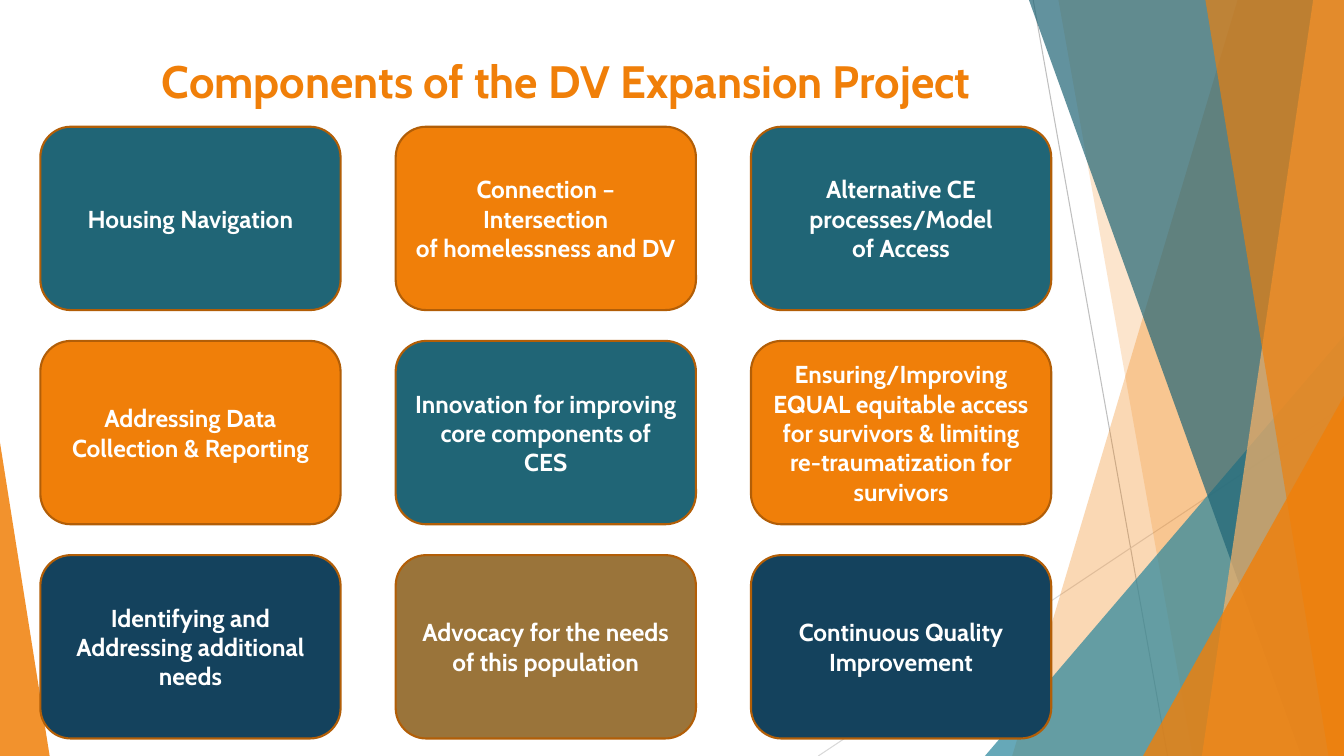
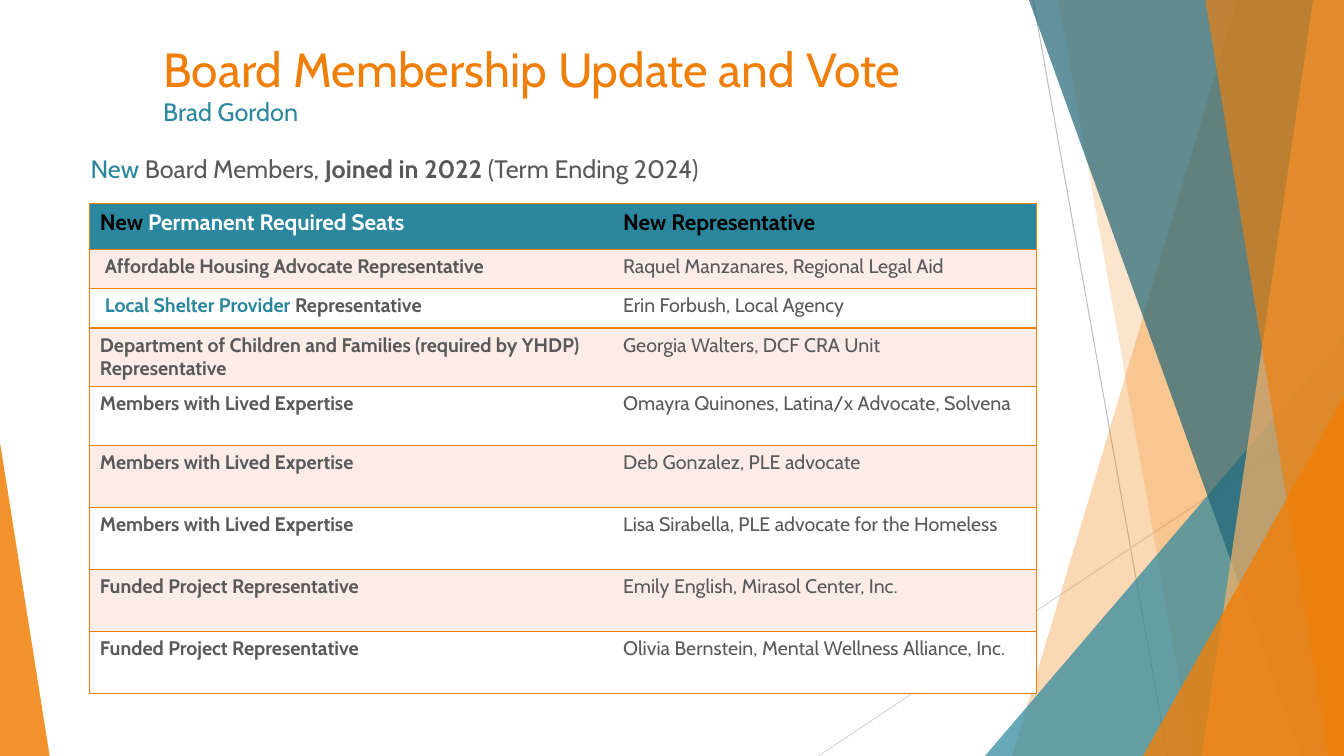
from lxml.etree import SubElement
from pptx import Presentation
from pptx.dml.color import RGBColor
from pptx.enum.shapes import MSO_CONNECTOR, MSO_SHAPE
from pptx.enum.text import MSO_ANCHOR, PP_ALIGN
from pptx.oxml import parse_xml
from pptx.oxml.ns import nsdecls, qn
from pptx.util import Pt

WIDTH, HEIGHT = 960, 540
FONT = "Cabin"
ORANGE, PALE_ORANGE, BROWN, RUST = "F07F09", "F9B268", "9A743A", "B25E07"
TEAL, DARK_TEAL, NAVY = "2B879D", "206576", "14425D"
WHITE, BLACK, GREY, BLUSH = "FFFFFF", "000000", "595959", "FCECE7"

COMPONENTS = [
    [("Housing Navigation", DARK_TEAL),
     ("Connection – Intersection\nof homelessness and DV", ORANGE),
     ("Alternative CE processes/Model\nof Access", DARK_TEAL)],
    [("Addressing Data Collection & Reporting", ORANGE),
     ("Innovation for improving core components of\nCES", DARK_TEAL),
     ("Ensuring/Improving EQUAL equitable access for survivors & limiting "
      "re-traumatization for survivors", ORANGE)],
    [("Identifying and Addressing additional needs", NAVY),
     ("Advocacy for the needs of this population", BROWN),
     ("Continuous Quality Improvement", NAVY)],
]

# Row height, left indent, runs of the seat, representative
SEATS = [
    (28.2, 3.5, [("Affordable Housing Advocate Representative", GREY)],
     "Raquel Manzanares, Regional Legal Aid"),
    (28.2, 3.5, [("Local Shelter Provider ", TEAL), ("Representative", GREY)],
     "Erin Forbush, Local Agency"),
    (42, 0, [("Department of Children and Families (required by YHDP) "
              "Representative", GREY)],
     "Georgia Walters, DCF CRA Unit"),
    (42, 0, [("Members with Lived Expertise", GREY)],
     "Omayra Quinones, Latina/x Advocate, Solvena"),
    (44.3, 0, [("Members with Lived Expertise", GREY)],
     "Deb Gonzalez, PLE advocate"),
    (44.3, 0, [("Members with Lived Expertise", GREY)],
     "Lisa Sirabella, PLE advocate for the Homeless"),
    (44.3, 0, [("Funded Project Representative", GREY)],
     "Emily English, Mirasol Center, Inc."),
    (44.3, 0, [("Funded Project Representative", GREY)],
     "Olivia Bernstein, Mental Wellness Alliance, Inc."),
]


def rgb(color):
    return RGBColor.from_string(color)


def write(p, runs, size, bold=False):
    """Fill a paragraph with (text, colour[, bold]) runs."""
    p.font.name, p.font.size, p.font.bold = FONT, Pt(size), bold
    p.font.color.rgb = rgb(runs[0][1])
    for text, color, *weight in runs:
        for i, line in enumerate(text.split("\n")):
            if i:
                p.add_line_break()
            r = p.add_run()
            r.text = line
            if color != runs[0][1]:
                r.font.color.rgb = rgb(color)
            if weight:
                r.font.bold = weight[0]


def add_text(s, left, top, width, height):
    tf = s.shapes.add_textbox(Pt(left), Pt(top), Pt(width), Pt(height)).text_frame
    tf.word_wrap = True
    return tf


def paint(sp, color, opacity=100):
    """Give a shape a flat fill with no outline and no shadow."""
    sp.shadow.inherit = False
    sp.line.fill.background()
    sp.fill.solid()
    sp.fill.fore_color.rgb = rgb(color)
    if opacity < 100:
        clr = sp.element.spPr.find(qn("a:solidFill"))[0]
        SubElement(clr, qn("a:alpha"), val=str(opacity * 1000))


def add_hairline(s, x1, y1, x2, y2, color):
    line = s.shapes.add_connector(
        MSO_CONNECTOR.STRAIGHT, Pt(x1), Pt(y1), Pt(x2), Pt(y2))
    line.line.color.rgb = rgb(color)
    line.line.width = Pt(0.75)
    SubElement(line.element.spPr, qn("a:effectLst"))


def add_pane(s, top_x, bottom_x, color, opacity):
    """Draw a full-height pane from a slanted left side to the slide's edge."""
    outline = s.shapes.build_freeform(Pt(top_x), 0)
    outline.add_line_segments(
        [(Pt(WIDTH), 0), (Pt(WIDTH), Pt(HEIGHT)), (Pt(bottom_x), Pt(HEIGHT))])
    paint(outline.convert_to_shape(), color, opacity)


def add_corner(s, left, top, width, apex, color, opacity):
    """Draw a triangle that stands on the bottom of the slide."""
    sp = s.shapes.add_shape(MSO_SHAPE.ISOSCELES_TRIANGLE, Pt(left), Pt(top),
                            Pt(width), Pt(HEIGHT - top))
    sp.adjustments[0] = apex
    paint(sp, color, opacity)


def move_to_layout(s):
    """Turn what is on the slide into the backdrop of its layout."""
    layout = s.slide_layout
    for ph in list(layout.placeholders):
        layout.shapes.element.remove(ph.element)
    for sp in list(s.shapes):
        layout.shapes.element.append(sp.element)


def add_backdrop(s):
    add_hairline(s, 738, 0, 834, HEIGHT, "BFBFBF")
    add_hairline(s, WIDTH, 290, 584.5, HEIGHT, "D9D9D9")
    add_pane(s, 884, 723, ORANGE, 30)
    add_pane(s, 756, 852, ORANGE, 20)
    add_corner(s, 703.5, 240, 256.5, 1, TEAL, 72)
    add_pane(s, 735, 929.5, DARK_TEAL, 70)
    add_pane(s, 938, 858.5, PALE_ORANGE, 70)
    add_pane(s, 861, 949, ORANGE, 65)
    add_corner(s, 816.5, 283, 143.5, 1, ORANGE, 80)
    add_corner(s, 0, 316, 35.5, 0, ORANGE, 85)
    move_to_layout(s)


def add_card(s, left, top, width, height, text, color):
    sp = s.shapes.add_shape(MSO_SHAPE.ROUNDED_RECTANGLE, Pt(left), Pt(top),
                            Pt(width), Pt(height))
    paint(sp, color)
    sp.line.color.rgb = rgb(RUST)
    sp.line.width = Pt(1.5)
    tf = sp.text_frame
    tf.word_wrap = True
    tf.vertical_anchor = MSO_ANCHOR.MIDDLE
    p = tf.paragraphs[0]
    p.alignment = PP_ALIGN.CENTER
    write(p, [(text, WHITE)], 17.5, True)


def set_borders(cell, sides):
    """Draw orange borders on the named sides (L, R, T, B), none elsewhere."""
    tcPr = cell._tc.get_or_add_tcPr()
    for i, side in enumerate("LRTB"):
        fill = (f'<a:solidFill><a:srgbClr val="{ORANGE}"/></a:solidFill>'
                if side in sides else "<a:noFill/>")
        tcPr.insert(i, parse_xml(
            f'<a:ln{side} {nsdecls("a")} w="{Pt(1)}">{fill}</a:ln{side}>'))


def fill_cell(cell, runs, size, bold, fill, sides):
    cell.fill.solid()
    cell.fill.fore_color.rgb = rgb(fill)
    set_borders(cell, sides)
    write(cell.text_frame.paragraphs[0], runs, size, bold)


def add_seat_table(s, left, top, widths):
    heights = [32.5] + [seat[0] for seat in SEATS]
    table = s.shapes.add_table(len(heights), 2, Pt(left), Pt(top),
                               Pt(sum(widths)), Pt(sum(heights))).table
    table.first_row = table.horz_banding = False
    for column, width in zip(table.columns, widths):
        column.width = Pt(width)
    for row, height in zip(table.rows, heights):
        row.height = Pt(height)

    header = [("New", BLACK), (" Permanent Required Seats", WHITE)]
    fill_cell(table.cell(0, 0), header, 16, True, TEAL, "LTB")
    fill_cell(table.cell(0, 1), [("New Representative", BLACK)], 16, True,
              TEAL, "RTB")
    for i, (_, indent, seat, person) in enumerate(SEATS, 1):
        band = BLUSH if i % 2 else WHITE
        fill_cell(table.cell(i, 0), seat, 14, True, band, "LTB")
        table.cell(i, 0).margin_left = Pt(7.2 + indent)
        fill_cell(table.cell(i, 1), [(person, GREY)], 14, False, band, "RTB")


def build_components(s):
    p = add_text(s, 66, 34.5, 677, 55.5).paragraphs[0]
    p.alignment = PP_ALIGN.CENTER
    write(p, [("Components of the DV Expansion Project", ORANGE)], 32.4, True)
    width, height, gap_x, gap_y = 214.5, 131, 39.3, 22
    for i, row in enumerate(COMPONENTS):
        for j, (text, color) in enumerate(row):
            add_card(s, 28.8 + j * (width + gap_x), 90.5 + i * (height + gap_y),
                     width, height, text, color)


def build_board(s):
    tf = add_text(s, 109.5, 24.5, 574, 67.5)
    write(tf.paragraphs[0], [("Board Membership Update and Vote", ORANGE)], 34.2)
    write(tf.add_paragraph(), [("Brad Gordon", TEAL)], 18)
    write(add_text(s, 57.6, 106, 664.5, 39.5).paragraphs[0],
          [("New ", TEAL), ("Board Members, ", GREY),
           ("Joined in 2022", GREY, True), (" (Term Ending 2024)", GREY)], 18)
    add_seat_table(s, 64.2, 145.5, [373.7, 302.4])


def main():
    prs = Presentation()
    prs.slide_width, prs.slide_height = Pt(WIDTH), Pt(HEIGHT)
    blank = prs.slide_layouts[6]
    components, board = (prs.slides.add_slide(blank) for _ in range(2))
    add_backdrop(components)
    build_components(components)
    build_board(board)
    prs.save("out.pptx")


if __name__ == "__main__":
    main()
